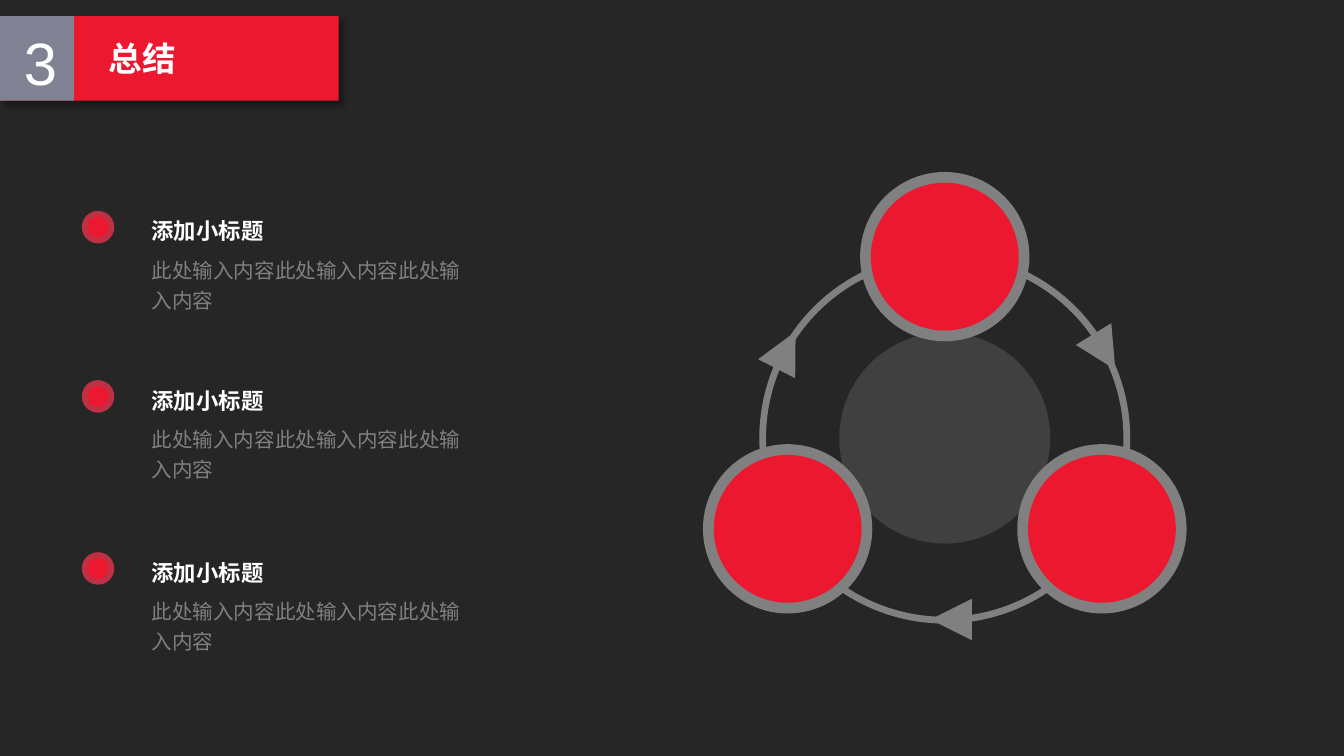
import math

import lxml.etree
import pptx
import pptx.dml.color
import pptx.enum.shapes
import pptx.enum.text
import pptx.oxml.ns
import pptx.util

COLORS = {
    "background": "262626",
    "red": "EB182F",
    "dark_red": "BE3144",
    "gray": "808080",
    "slate": "808193",
    "hub": "404040",
    "white": "FFFFFF",
    "shadow": "000000",
}
SHAPES = pptx.enum.shapes.MSO_SHAPE
WIDTH = 10
HEIGHT = WIDTH * 9 / 16
CENTER_X, CENTER_Y = 7.03, 3.26
ORBIT = 1.35
NODE_ANGLES = (30, 150, 270)
ARROWS = ((-28.4, 148.5), (88, 270), (209, 27.1))
ITEM_TOPS = (1.59, 2.85, 4.13)
HEADING = "添加小标题"
BODY = "此处输入内容" * 3


def color(name):
    """Return the named colour as an RGB value."""
    return pptx.dml.color.RGBColor.from_string(COLORS[name])


def add_shape(slide, kind, area, fill):
    """Add a plain filled shape to the slide."""
    shape = slide.shapes.add_shape(kind, *map(pptx.util.Inches, area))
    shape.shadow.inherit = False
    shape.fill.solid()
    shape.fill.fore_color.rgb = color(fill)
    shape.line.fill.background()
    return shape


def add_centered(slide, kind, center, size, fill):
    """Add a square-framed shape around a centre point."""
    x, y = center
    return add_shape(slide, kind, (x - size / 2, y - size / 2, size, size), fill)


def set_text(box, text, size, fill, bold=False):
    """Write one paragraph into a box and format it."""
    frame = box.text_frame
    frame.word_wrap = True
    frame.text = text
    font = frame.paragraphs[0].runs[0].font
    font.name, font.size, font.bold = "Arial", pptx.util.Pt(size), bold
    font.color.rgb = color(fill)
    return frame.paragraphs[0]


def add_text(slide, area, text, size, fill, bold=False):
    """Add a wrapping text box and return its paragraph."""
    box = slide.shapes.add_textbox(*map(pptx.util.Inches, area))
    return set_text(box, text, size, fill, bold)


def add_shadow(shape):
    """Give the shape a soft shadow towards the lower right."""
    effects = shape.element.spPr.find(pptx.oxml.ns.qn("a:effectLst"))
    shadow = lxml.etree.SubElement(
        effects, pptx.oxml.ns.qn("a:outerShdw"),
        blurRad=str(pptx.util.Pt(4)), dist=str(pptx.util.Pt(3)),
        dir=str(45 * 60000), algn="tl", rotWithShape="0")
    tint = lxml.etree.SubElement(
        shadow, pptx.oxml.ns.qn("a:srgbClr"), val=COLORS["shadow"])
    lxml.etree.SubElement(tint, pptx.oxml.ns.qn("a:alpha"), val="40000")


def add_header(slide, number, text):
    """Build the numbered banner with the slide title on it."""
    add_shadow(add_shape(slide, SHAPES.RECTANGLE, (0, 0.12, 2.52, 0.63), "red"))
    add_shape(slide, SHAPES.RECTANGLE, (0, 0.12, 0.55, 0.63), "slate")
    add_text(slide, (0.08, 0.14, 0.47, 0.64), number, 32, "white")
    title = slide.shapes.title
    title.left, title.top, title.width, title.height = map(
        pptx.util.Inches, (0.71, 0.14, 1.89, 0.59))
    paragraph = set_text(title, text, 18, "white", True)
    paragraph.alignment = pptx.enum.text.PP_ALIGN.LEFT
    title.text_frame.auto_size = pptx.enum.text.MSO_AUTO_SIZE.NONE
    title.text_frame.vertical_anchor = pptx.enum.text.MSO_ANCHOR.MIDDLE
    title.element.getparent().append(title.element)


def orbit_point(angle):
    """Return the point on the cycle at an angle in degrees."""
    turn = math.radians(angle)
    return CENTER_X + ORBIT * math.cos(turn), CENTER_Y + ORBIT * math.sin(turn)


def add_cycle(slide):
    """Build the ring of three nodes with arrows between them."""
    add_centered(slide, SHAPES.OVAL, (CENTER_X, CENTER_Y), 1.57, "hub")
    nodes = [orbit_point(angle) for angle in NODE_ANGLES]
    for node in nodes:
        add_centered(slide, SHAPES.OVAL, node, 1.26, "gray")
    ring = add_centered(slide, SHAPES.DONUT, (CENTER_X, CENTER_Y), 2.76, "gray")
    ring.adjustments[0] = 0.05 / 2.76
    for node in nodes:
        add_centered(slide, SHAPES.OVAL, node, 1.1, "red")
    for angle, rotation in ARROWS:
        arrow = add_centered(
            slide, SHAPES.ISOSCELES_TRIANGLE, orbit_point(angle), 0.31, "gray")
        arrow.rotation = rotation


def add_item(slide, top, heading, body):
    """Add a bullet dot with its heading and body text."""
    dot = add_shape(slide, SHAPES.OVAL, (0.63, top, 0.2, 0.2), "red")
    dot.line.color.rgb = color("dark_red")
    dot.line.width = pptx.util.Pt(3)
    add_text(slide, (1.03, top - 0.02, 1.77, 0.3), heading, 12, "white", True)
    paragraph = add_text(slide, (1.03, top + 0.24, 2.56, 0.77), body, 11, "gray")
    paragraph.line_spacing = pptx.util.Pt(16)


def main():
    """Build the summary slide and save the deck."""
    deck = pptx.Presentation()
    deck.slide_width = pptx.util.Inches(WIDTH)
    deck.slide_height = pptx.util.Inches(HEIGHT)
    slide = deck.slides.add_slide(deck.slide_layouts.get_by_name("Title Only"))
    slide.background.fill.solid()
    slide.background.fill.fore_color.rgb = color("background")
    add_cycle(slide)
    add_header(slide, "3", "总结")
    for top in ITEM_TOPS:
        add_item(slide, top, HEADING, BODY)
    deck.save("out.pptx")


if __name__ == "__main__":
    main()
